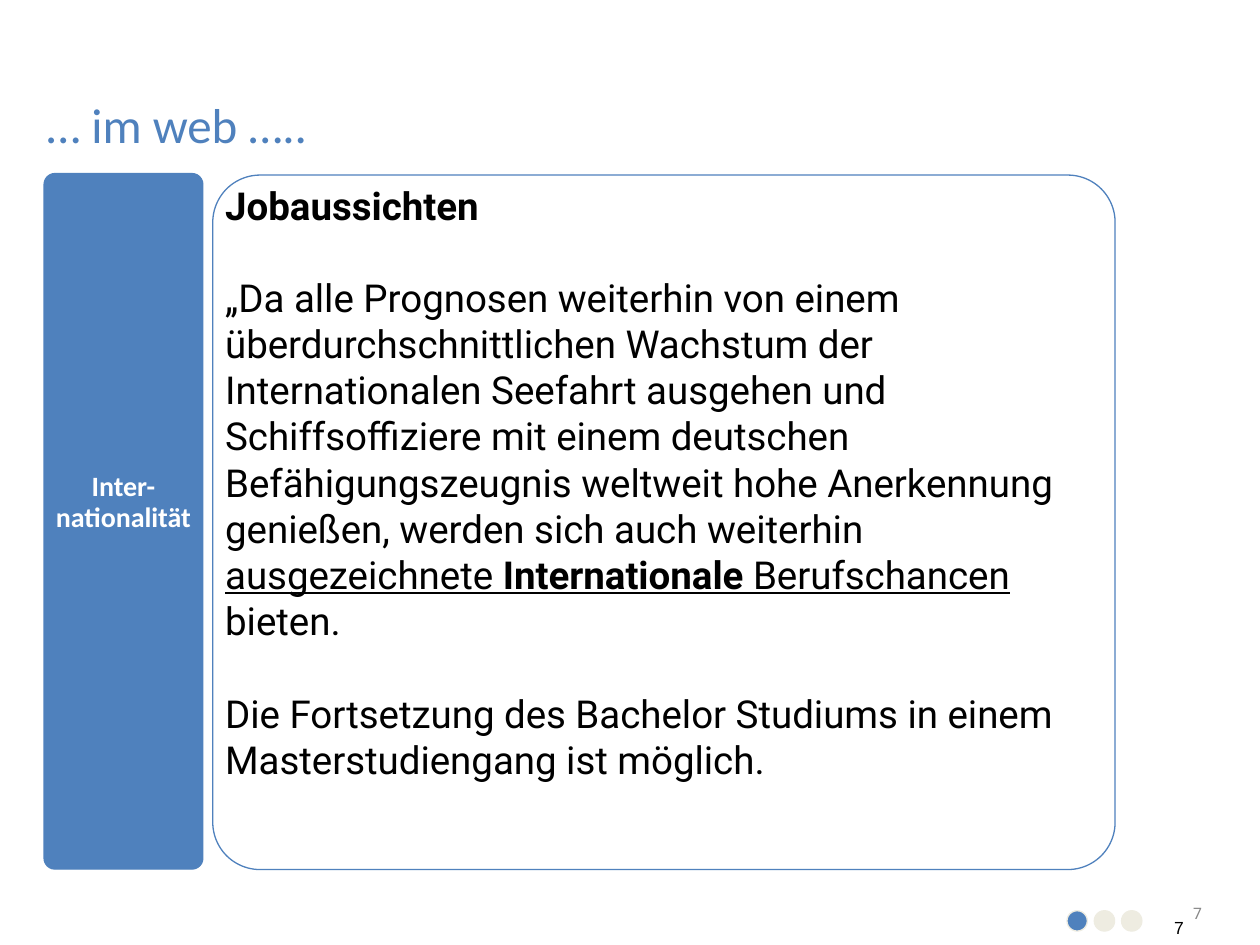
from pptx import Presentation
from pptx.dml.color import RGBColor
from pptx.enum import shapes, text
from pptx.util import Cm, Pt

COLOURS = {"blue": "4F81BD", "sand": "EEECE1", "grey": "878787",
           "black": "000000", "white": "FFFFFF"}
ALIGN = text.PP_ALIGN
ANCHOR = text.MSO_ANCHOR
SHAPE = shapes.MSO_SHAPE


def colour(name):
    return RGBColor.from_string(COLOURS[name])


def write(para, words, font="Roboto", size=22, ink="black", bold=False, underline=False):
    span = para.add_run()
    span.text = words
    span.font.name = font
    span.font.size = Pt(size)
    span.font.bold = bold
    span.font.underline = underline
    span.font.color.rgb = colour(ink)


class SlideBuilder:
    corner = 0.068
    line_width = Pt(0.75)

    def __init__(self, page):
        self.page = page

    def frame(self, box, insets, anchor=ANCHOR.TOP, wrap=True):
        frame = box.text_frame
        frame.word_wrap = wrap
        frame.vertical_anchor = anchor
        (frame.margin_left, frame.margin_top,
         frame.margin_right, frame.margin_bottom) = map(Cm, insets)
        return frame

    def paragraph(self, frame, spans, first=False, align=ALIGN.LEFT,
                  spacing=None, before=0, **style):
        para = frame.paragraphs[0] if first else frame.add_paragraph()
        para.alignment = align
        para.line_spacing = spacing
        para.space_before = Pt(0 if first else before)
        for words, changes in spans:
            write(para, words, **{**style, **changes})

    def label(self, area, paragraphs, insets=(0.25, 0.13, 0.25, 0.13),
              anchor=ANCHOR.TOP, wrap=True, **style):
        box = self.page.shapes.add_textbox(*map(Cm, area))
        self.fill_text(box, paragraphs, insets, anchor, wrap, **style)

    def fill_text(self, box, paragraphs, insets, anchor, wrap=True, **style):
        frame = self.frame(box, insets, anchor, wrap)
        for index, spans in enumerate(paragraphs):
            self.paragraph(frame, spans, first=index == 0, **style)

    def shape(self, kind, area, fill=None, line="blue", parent=None):
        box = (parent or self.page).shapes.add_shape(kind, *map(Cm, area))
        box.shadow.inherit = False
        if fill:
            box.fill.solid()
            box.fill.fore_color.rgb = colour(fill)
        else:
            box.fill.background()
        box.line.color.rgb = colour(line)
        box.line.width = self.line_width
        return box

    def panel(self, area, fill=None):
        box = self.shape(SHAPE.ROUNDED_RECTANGLE, area, fill)
        box.adjustments[0] = self.corner
        return box

    def dots(self, left, top, size, step, fills):
        group = self.page.shapes.add_group_shape()
        for index, fill in enumerate(fills):
            area = (left + index * step, top, size, size)
            self.shape(SHAPE.OVAL, area, fill, "sand", group)


def main():
    deck = Presentation()
    deck.slide_width, deck.slide_height = Cm(25.4), Cm(19.05)
    builder = SlideBuilder(deck.slides.add_slide(deck.slide_layouts[6]))

    builder.label((23.34, 18.08, 1.14, 0.64), [[("7", {})]], wrap=False,
                  align=ALIGN.RIGHT, size=9, ink="grey")
    builder.label((23.5, 18.36, 0.43, 0.41), [[("7", {})]], wrap=False,
                  insets=(0.17, 0.13, 0, 0), font="Arial", size=10)
    builder.label((0.94, 1.4, 22.1, 1.7), [[("… im web …..", {})]],
                  insets=(0, 0, 0, 0), anchor=ANCHOR.BOTTOM, spacing=0.85,
                  font="Calibri", size=28, ink="blue")
    builder.dots(21.51, 18.36, 0.41, 0.55, ["blue", "sand", "sand"])

    sidebar = builder.panel((0.89, 3.5, 3.2, 14.02), "blue")
    builder.fill_text(sidebar, [[("Inter-", {})], [("nationalität", {})]],
                      (0.1, 0.1, 0.1, 0.82), ANCHOR.MIDDLE, align=ALIGN.CENTER,
                      spacing=0.85, before=1.6, font="Calibri", size=16,
                      ink="white", bold=True)

    builder.panel((4.29, 3.53, 18.19, 14))
    underlined = {"underline": True}
    builder.label((4.29, 3.53, 18.19, 10.59), [
        [("Jobaussichten", {"bold": True})],
        [("„Da alle Prognosen weiterhin von einem überdurchschnittlichen Wachstum "
          "der Internationalen Seefahrt ausgehen und Schiffsoffiziere mit einem "
          "deutschen Befähigungszeugnis weltweit hohe Anerkennung genießen, "
          "werden sich auch weiterhin ", {}),
         ("ausgezeichnete ", underlined),
         ("Internationale", {"bold": True, **underlined}),
         (" Berufschancen", underlined),
         (" bieten.", {})],
        [("Die Fortsetzung des Bachelor Studiums in einem Masterstudiengang "
          "ist möglich.", {})],
    ], before=26.4)

    deck.save("out.pptx")


if __name__ == "__main__":
    main()
